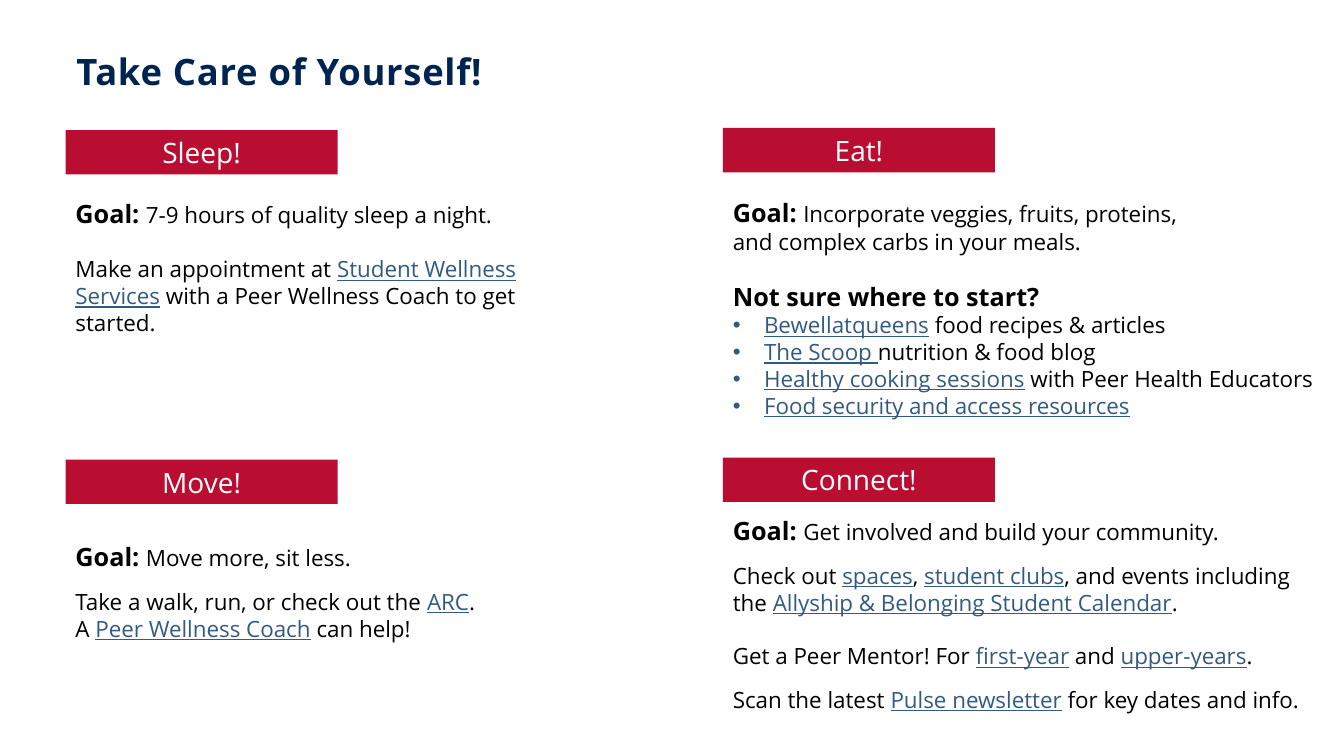
from dataclasses import dataclass
from typing import NamedTuple

from lxml import etree
from pptx import Presentation
from pptx.dml.color import RGBColor
from pptx.enum.shapes import MSO_SHAPE
from pptx.enum.text import MSO_ANCHOR, PP_ALIGN
from pptx.oxml.ns import qn
from pptx.util import Inches, Pt

RECT = MSO_SHAPE.RECTANGLE
MIDDLE, TOP = MSO_ANCHOR.MIDDLE, MSO_ANCHOR.TOP
CENTER = PP_ALIGN.CENTER

FONT = "Open Sans"
COLORS = {
    "navy": "002452",
    "red": "B90E31",
    "link": "335B81",
    "black": "000000",
    "white": "FFFFFF",
}
SLIDE_W, SLIDE_H = Inches(13.33), Inches(7.5)

# All positions and sizes are percentages of the slide's width or height.
COLUMNS = (4.88, 53.79)
ROWS = (17.2, 60.8)
RIGHT_COLUMN_RISE = 0.27
BANNER_W, BANNER_H = 20.25, 5.87

LINE_GAP = 19
PARA_GAP = 12
BULLET_INDENT = Inches(0.31)


class Style(NamedTuple):
    size: int
    color: str
    bold: bool = False
    underline: bool = False


TITLE = Style(26, "navy", bold=True)
BANNER = Style(20, "white")
LEAD = Style(18, "black", bold=True)
BODY = Style(16, "black")
LINK = Style(16, "link", underline=True)


class Span(NamedTuple):
    text: str
    style: Style = BODY


@dataclass
class Para:
    spans: list[Span]
    before: int = 0
    bullet: bool = False


class Box(NamedTuple):
    left: float
    top: float
    width: float
    height: float


@dataclass
class Section:
    heading: str
    col: int
    row: int
    body_top: float
    body_width: float
    body_height: float
    paras: list[Para]


GOAL = Span("Goal: ", LEAD)

SECTIONS = [
    Section("Sleep!", 0, 0, 25.6, 38.1, 19.73, [
        Para([GOAL, Span("7-9 hours of quality sleep a night.")]),
        Para([Span("Make an appointment at "),
              Span("Student Wellness Services", LINK),
              Span(" with a Peer Wellness Coach to get started.")], LINE_GAP),
    ]),
    Section("Eat!", 1, 0, 25.47, 46.2, 30.93, [
        Para([GOAL, Span("Incorporate veggies, fruits, proteins,\n"
                         "and complex carbs in your meals.")]),
        Para([Span("Not sure where to start?", LEAD)], LINE_GAP),
        Para([Span("Bewellatqueens", LINK),
              Span(" food recipes & articles")], bullet=True),
        Para([Span("The Scoop ", LINK),
              Span("nutrition & food blog")], bullet=True),
        Para([Span("Healthy cooking sessions", LINK),
              Span(" with Peer Health Educators")], bullet=True),
        Para([Span("Food security and access resources", LINK)], bullet=True),
    ]),
    Section("Move!", 0, 1, 70.93, 41.55, 18.13, [
        Para([GOAL, Span("Move more, sit less.")]),
        Para([Span("Take a walk, run, or check out the "),
              Span("ARC", LINK), Span(".")], PARA_GAP),
        Para([Span("A "), Span("Peer Wellness Coach", LINK),
              Span(" can help!")]),
    ]),
    Section("Connect!", 1, 1, 67.47, 45.08, 29.07, [
        Para([GOAL, Span("Get involved and build your community.")]),
        Para([Span("Check out "), Span("spaces", LINK), Span(", "),
              Span("student clubs", LINK),
              Span(", and events including the "),
              Span("Allyship & Belonging Student Calendar", LINK),
              Span(".")], PARA_GAP),
        Para([Span("Get a Peer Mentor! For "), Span("first-year", LINK),
              Span(" and "), Span("upper-years", LINK), Span(".")], LINE_GAP),
        Para([Span("Scan the latest "), Span("Pulse newsletter", LINK),
              Span(" for key dates and info.")], PARA_GAP),
    ]),
]


def rgb(name: str) -> RGBColor:
    return RGBColor.from_string(COLORS[name])


def to_emu(box: Box) -> tuple[int, int, int, int]:
    """Turn percentages of the slide into lengths."""
    return (round(SLIDE_W * box.left / 100), round(SLIDE_H * box.top / 100),
            round(SLIDE_W * box.width / 100), round(SLIDE_H * box.height / 100))


def add_span(p, span: Span) -> None:
    for i, line in enumerate(span.text.split("\n")):
        if i:
            p.add_line_break()
        r = p.add_run()
        r.text = line
        r.font.name = FONT
        r.font.size = Pt(span.style.size)
        r.font.bold = span.style.bold
        r.font.underline = span.style.underline
        r.font.color.rgb = rgb(span.style.color)


def add_bullet(p) -> None:
    pPr = p._p.get_or_add_pPr()
    pPr.set("marL", str(BULLET_INDENT))
    pPr.set("indent", str(-BULLET_INDENT))
    color = etree.SubElement(pPr, qn("a:buClr"))
    etree.SubElement(color, qn("a:srgbClr")).set("val", COLORS["link"])
    etree.SubElement(pPr, qn("a:buFont")).set("typeface", "Arial")
    etree.SubElement(pPr, qn("a:buChar")).set("char", "•")


def add_text(slide, box: Box, paras: list[Para]):
    tf = slide.shapes.add_textbox(*to_emu(box)).text_frame
    tf.word_wrap = True
    tf.vertical_anchor = TOP
    for i, para in enumerate(paras):
        p = tf.add_paragraph() if i else tf.paragraphs[0]
        if para.bullet:
            add_bullet(p)
        if para.before:
            p.space_before = Pt(para.before)
        for span in para.spans:
            add_span(p, span)
    return tf


def add_title(slide, text: str) -> None:
    tf = add_text(slide, Box(4.95, 6.53, 81.7, 9.2), [Para([Span(text, TITLE)])])
    p = tf.paragraphs[0]
    p.line_spacing = 0.9
    p.runs[0]._r.get_or_add_rPr().set("spc", "50")


def add_banner(slide, box: Box, text: str) -> None:
    sp = slide.shapes.add_shape(RECT, *to_emu(box))
    sp.shadow.inherit = False
    sp.fill.solid()
    sp.fill.fore_color.rgb = rgb("red")
    sp.line.fill.background()
    tf = sp.text_frame
    tf.word_wrap = True
    tf.vertical_anchor = MIDDLE
    p = tf.paragraphs[0]
    p.alignment = CENTER
    add_span(p, Span(text, BANNER))


def add_section(slide, section: Section) -> None:
    left = COLUMNS[section.col]
    top = ROWS[section.row] - section.col * RIGHT_COLUMN_RISE
    add_banner(slide, Box(left, top, BANNER_W, BANNER_H), section.heading)
    add_text(slide, Box(left, section.body_top, section.body_width,
                        section.body_height), section.paras)


def main() -> None:
    prs = Presentation()
    prs.slide_width, prs.slide_height = SLIDE_W, SLIDE_H
    slide = prs.slides.add_slide(prs.slide_layouts[6])
    add_title(slide, "Take Care of Yourself!")
    for section in SECTIONS:
        add_section(slide, section)
    prs.save("out.pptx")


if __name__ == "__main__":
    main()
